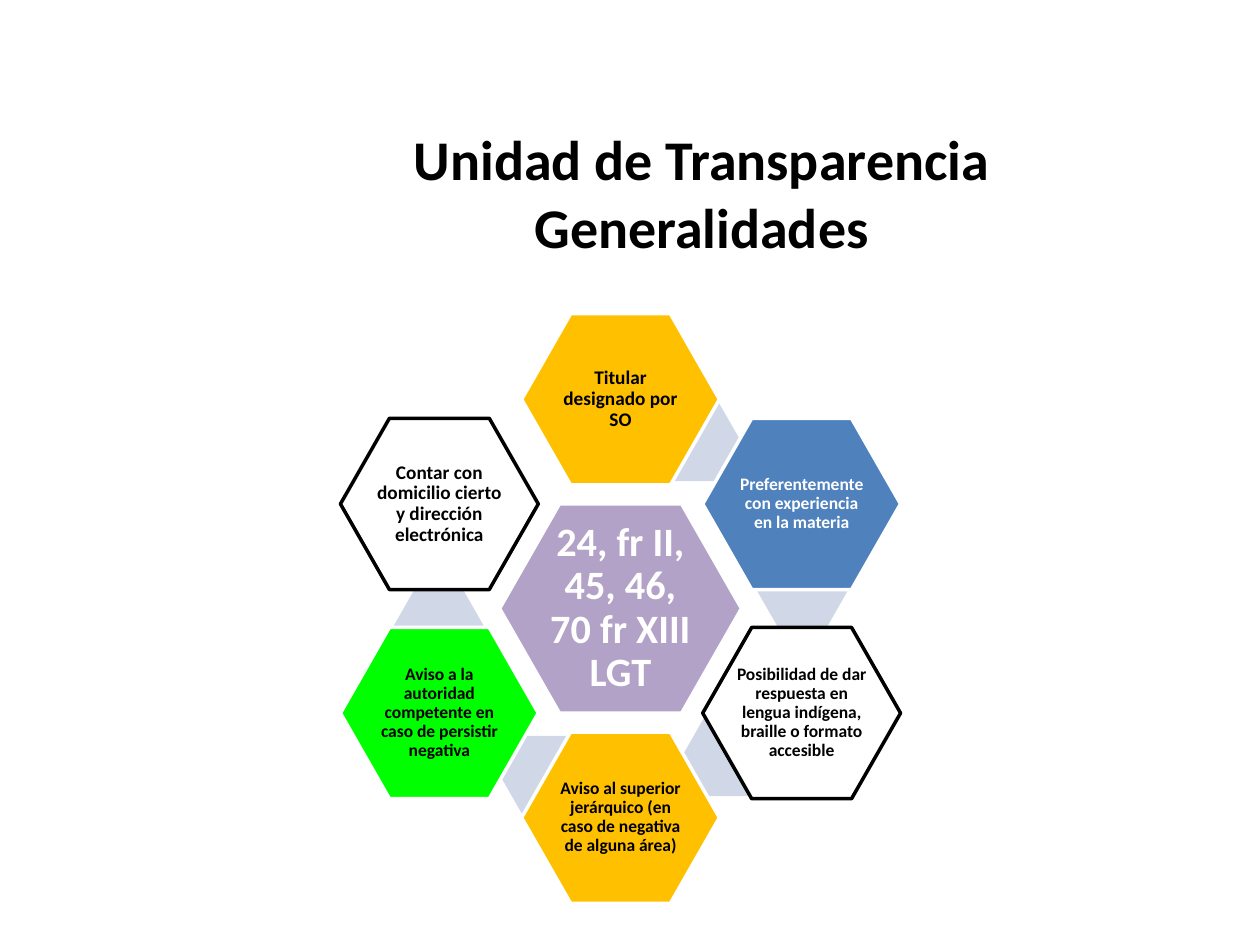
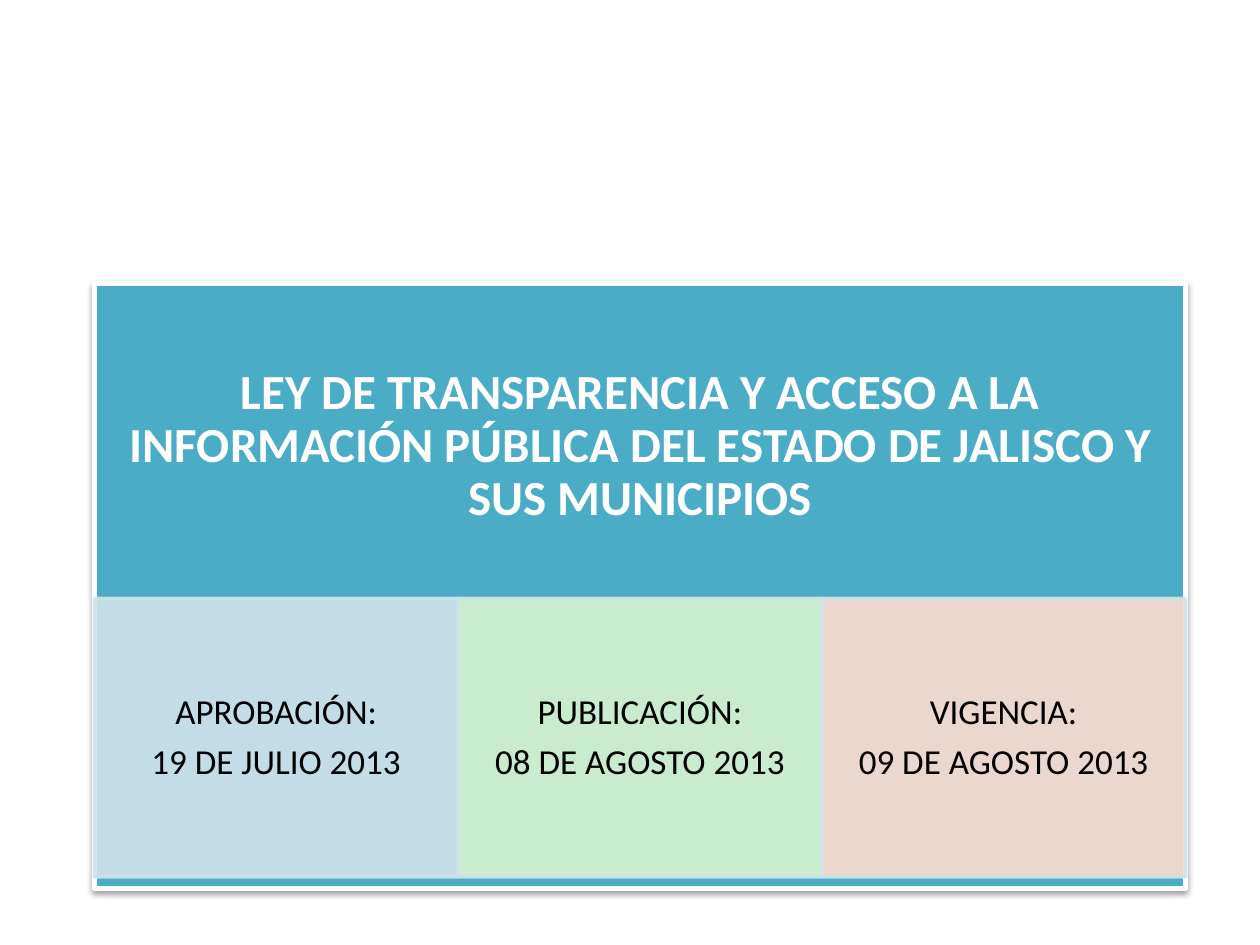
from math import cos, radians, sin

from pptx import Presentation
from pptx.dml.color import RGBColor
from pptx.enum.shapes import MSO_SHAPE as SHAPE
from pptx.enum.text import MSO_ANCHOR as ANCHOR, PP_ALIGN as ALIGN
from pptx.oxml.ns import qn
from pptx.util import Inches, Pt
from lxml.etree import SubElement

WHITE = RGBColor(0xFF, 0xFF, 0xFF)
BLACK = RGBColor(0x00, 0x00, 0x00)
LILAC = RGBColor(0xB3, 0xA2, 0xC7)
AMBER = RGBColor(0xFF, 0xC0, 0x00)
BLUE = RGBColor(0x4F, 0x81, 0xBD)
GREEN = RGBColor(0x00, 0xFF, 0x00)
LINK = RGBColor(0xD0, 0xD8, 0xE8)
TEAL = RGBColor(0x4B, 0xAC, 0xC6)
PALE_BLUE = RGBColor(0xD0, 0xE3, 0xEA)
PALE_GREEN = RGBColor(0xD6, 0xF4, 0xCE)
PALE_ORANGE = RGBColor(0xFC, 0xDD, 0xCF)

COLS, ROWS = 40, 30
TITLE_ONLY, BLANK = 5, 6


class Deck:
    """Holds the style and the current slide; lengths are grid columns and rows."""

    font = "Calibri"

    def __init__(self):
        self.prs = Presentation()
        self.prs.slide_width, self.prs.slide_height = Inches(10), Inches(7.5)
        self.s = None

    def add_slide(self, layout):
        self.s = self.prs.slides.add_slide(self.prs.slide_layouts[layout])

    def box(self, x, y, w, h):
        col, row = self.prs.slide_width / COLS, self.prs.slide_height / ROWS
        return [round(n) for n in (x * col, y * row, w * col, h * row)]

    def set_text(self, tf, text, size, color, bold, spacing=0.9):
        tf.text = text
        tf.word_wrap = True
        tf.vertical_anchor = ANCHOR.MIDDLE
        for p in tf.paragraphs:
            p.alignment = ALIGN.CENTER
            p.line_spacing = spacing
            p.space_before = Pt(0)
            p.space_after = Pt(0.35 * size)
            for r in p.runs:
                f = r.font
                f.name, f.size, f.bold = self.font, Pt(size), bold
                f.color.rgb = color

    def title(self, text, box):
        sp = self.s.shapes.title
        sp.left, sp.top, sp.width, sp.height = self.box(*box)
        self.set_text(sp.text_frame, text, 32, BLACK, True, spacing=1)

    def shape(self, kind, box, fill, line=None, width=2, alpha=100):
        sp = self.s.shapes.add_shape(kind, *self.box(*box))
        sp.shadow.inherit = False
        sp.fill.solid()
        sp.fill.fore_color.rgb = fill
        if line is None:
            sp.line.fill.background()
        else:
            sp.line.color.rgb = line
            sp.line.width = Pt(width)
        if alpha < 100:
            for color in sp._element.spPr.iter(qn("a:srgbClr")):
                SubElement(color, qn("a:alpha"), val=str(alpha * 1000))
        return sp

    def hexagon(self, center, size, fill, line=None):
        (cx, cy), (w, h) = center, size
        sp = self.shape(SHAPE.HEXAGON, (cx - w / 2, cy - h / 2, w, h), fill, line)
        sp.adjustments[0] = 0.286
        return sp

    def label(self, sp, text, size, color=BLACK, bold=True, insets=(0.01,) * 4):
        """Put text in a shape; insets are left, top, right, bottom in inches."""
        tf = sp.text_frame
        (tf.margin_left, tf.margin_top,
         tf.margin_right, tf.margin_bottom) = map(Inches, insets)
        self.set_text(tf, text, size, color, bold)

    def cast_shadow(self, sp):
        effects = sp._element.spPr.find(qn("a:effectLst"))
        shadow = SubElement(effects, qn("a:outerShdw"), blurRad=str(Pt(3.1)),
                            dist=str(Pt(1.6)), dir="5400000", rotWithShape="0")
        color = SubElement(shadow, qn("a:srgbClr"), val="000000")
        SubElement(color, qn("a:alpha"), val="38000")


def around(center, radius, angle):
    """Point at a clockwise angle from the top of a circle."""
    a = radians(angle)
    return center[0] + radius * sin(a), center[1] - radius * cos(a)


def transparency_unit(deck):
    deck.add_slide(TITLE_ONLY)
    deck.title("Unidad de Transparencia\vGeneralidades", (6.56, 3.6, 31.44, 5))

    center = (19.7, 19.32)
    core = deck.hexagon(center, (7.68, 6.64), LILAC, WHITE)
    deck.label(core, "24, fr II, 45, 46, 70 fr XIII LGT", 23, WHITE,
               insets=(0.03,) * 4)

    duties = [
        ("Titular designado por SO", 11, AMBER, WHITE, BLACK),
        ("Preferentemente con experiencia en la materia", 10, BLUE, WHITE, WHITE),
        ("Posibilidad de dar respuesta en lengua indígena, braille o formato "
         "accesible", 10, WHITE, BLACK, BLACK),
        ("Aviso al superior jerárquico (en caso de negativa de alguna área)",
         10, AMBER, WHITE, BLACK),
        ("Aviso a la autoridad competente en caso de persistir negativa",
         10, GREEN, WHITE, BLACK),
        ("Contar con domicilio cierto y dirección electrónica",
         11, WHITE, BLACK, BLACK),
    ]
    step = 360 / len(duties)
    for i, (text, size, fill, line, color) in enumerate(duties):
        if i < len(duties) - 1:
            deck.hexagon(around(center, 5.8, i * step + 24.4), (2.88, 2.48), LINK)
        sp = deck.hexagon(around(center, 6.64, i * step), (6.28, 5.44), fill, line)
        deck.label(sp, text, size, color)


def transparency_law(deck):
    deck.add_slide(BLANK)
    left, top, width, height = 3, 9, 34.64, 19.2
    panel = deck.shape(SHAPE.RECTANGLE, (left, top, width, height), TEAL, WHITE, 3)
    deck.cast_shadow(panel)
    deck.label(panel, "LEY DE TRANSPARENCIA Y ACCESO A LA INFORMACIÓN PÚBLICA "
               "DEL ESTADO DE JALISCO Y SUS MUNICIPIOS", 28, WHITE,
               insets=(0.22, 0.22, 0.22, 2.43))

    dates = [
        ("APROBACIÓN:\n19 DE JULIO 2013", PALE_BLUE),
        ("PUBLICACIÓN:\n08 DE AGOSTO 2013", PALE_GREEN),
        ("VIGENCIA:\n09 DE AGOSTO 2013", PALE_ORANGE),
    ]
    cell = width / len(dates)
    for i, (text, fill) in enumerate(dates):
        sp = deck.shape(SHAPE.RECTANGLE, (left + i * cell, 19, cell, 8.84),
                        fill, PALE_BLUE, alpha=90)
        deck.label(sp, text, 20, bold=False, insets=(0.16, 0.03, 0.16, 0.03))


def main():
    deck = Deck()
    transparency_unit(deck)
    transparency_law(deck)
    deck.prs.save("out.pptx")


if __name__ == "__main__":
    main()
